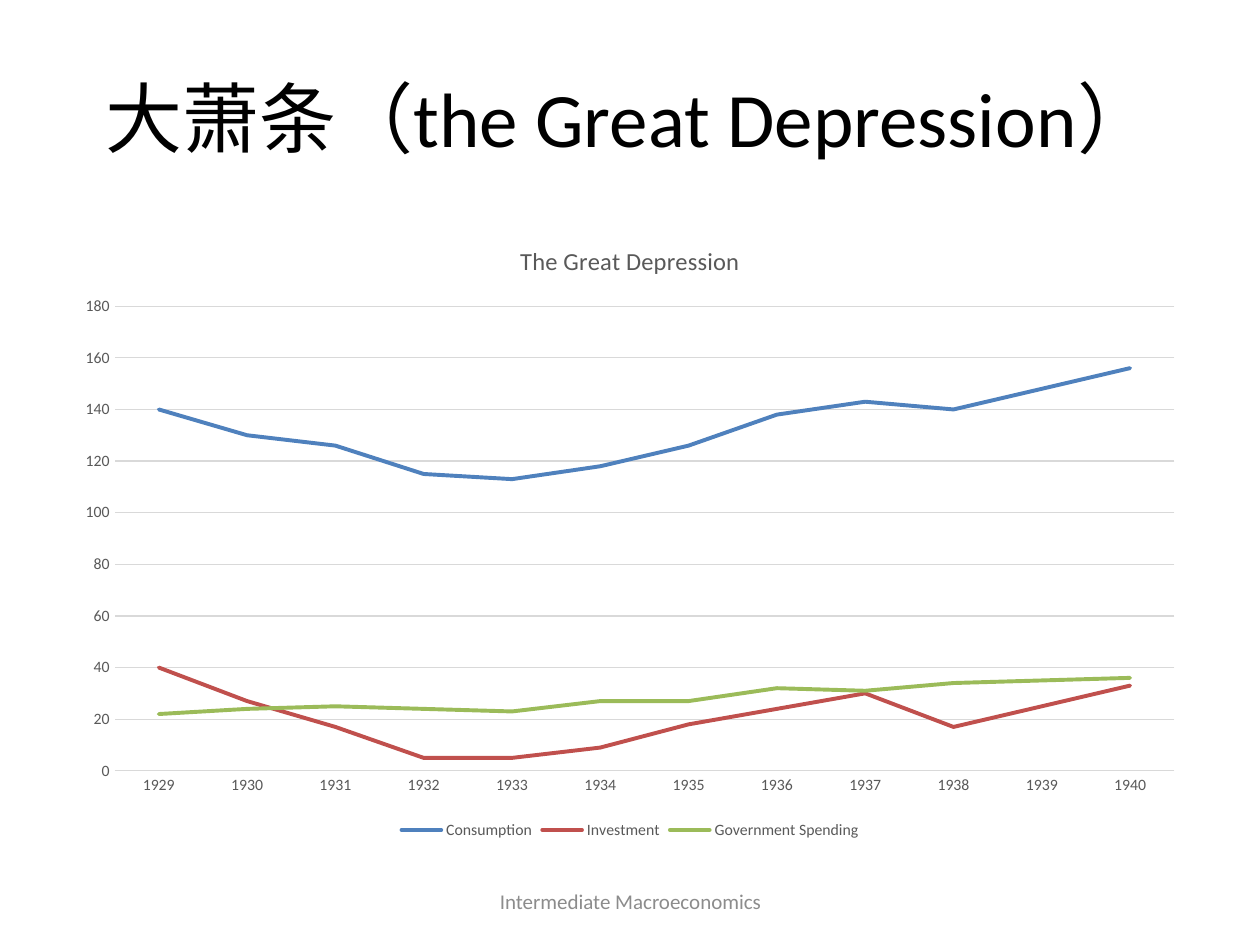
from dataclasses import dataclass

from pptx import Presentation
from pptx.chart.data import CategoryChartData
from pptx.dml.color import RGBColor
from pptx.enum.chart import XL_CHART_TYPE, XL_LEGEND_POSITION, XL_MARKER_STYLE, XL_TICK_MARK
from pptx.enum.text import MSO_ANCHOR, PP_ALIGN
from pptx.util import Emu, Pt

LINE_CHART = XL_CHART_TYPE.LINE
LEGEND_BOTTOM = XL_LEGEND_POSITION.BOTTOM
NO_MARKER = XL_MARKER_STYLE.NONE
NO_TICK = XL_TICK_MARK.NONE
MIDDLE = MSO_ANCHOR.MIDDLE
CENTER = PP_ALIGN.CENTER

EMU_PER_PX = 9144  # 100 px to the inch


@dataclass(frozen=True)
class Theme:
    font: str = "Calibri"
    ink: str = "000000"
    footer: str = "8C8C8C"
    label: str = "595959"
    grid: str = "D9D9D9"
    title_size: int = 44
    footer_size: int = 12
    chart_title_size: int = 14
    chart_size: int = 10
    label_size: int = 9
    grid_width: float = 0.75
    series_width: float = 2.25


@dataclass(frozen=True)
class Box:
    left: int
    top: int
    width: int
    height: int

    def emu(self) -> tuple:
        return tuple(px(v) for v in (self.left, self.top, self.width, self.height))


@dataclass(frozen=True)
class Label:
    text: str
    box: Box
    size: int
    color: str


@dataclass(frozen=True)
class Series:
    name: str
    color: str
    values: tuple


THEME = Theme()

LABELS = (
    Label("大萧条（the Great Depression）", Box(50, 30, 900, 125), THEME.title_size, THEME.ink),
    Label("Intermediate Macroeconomics", Box(342, 695, 317, 40), THEME.footer_size, THEME.footer),
)

CHART_BOX = Box(50, 175, 900, 495)
YEARS = [str(year) for year in range(1929, 1941)]
SERIES = (
    Series("Consumption", "4F81BD",
           (140, 130, 126, 115, 113, 118, 126, 138, 143, 140, 148, 156)),
    Series("Investment", "C0504D",
           (40, 27, 17, 5, 5, 9, 18, 24, 30, 17, 25, 33)),
    Series("Government Spending", "9BBB59",
           (22, 24, 25, 24, 23, 27, 27, 32, 31, 34, 35, 36)),
)


def px(value: int) -> Emu:
    return Emu(value * EMU_PER_PX)


def style_font(font, size: int, color: str) -> None:
    font.name = THEME.font
    font.size = Pt(size)
    font.bold = False
    font.color.rgb = RGBColor.from_string(color)


def style_line(line, width: float, color: str) -> None:
    line.width = Pt(width)
    line.color.rgb = RGBColor.from_string(color)


def add_label(s, label: Label) -> None:
    tf = s.shapes.add_textbox(*label.box.emu()).text_frame
    tf.word_wrap = True
    tf.vertical_anchor = MIDDLE
    tf.text = label.text
    p = tf.paragraphs[0]
    p.alignment = CENTER
    style_font(p.runs[0].font, label.size, label.color)


def style_axis(axis) -> None:
    axis.major_tick_mark = NO_TICK
    axis.minor_tick_mark = NO_TICK
    style_font(axis.tick_labels.font, THEME.label_size, THEME.label)


def add_line_chart(s, box: Box, title: str, series: tuple) -> None:
    data = CategoryChartData(number_format="General")
    data.categories = YEARS
    for item in series:
        data.add_series(item.name, item.values)
    chart = s.shapes.add_chart(LINE_CHART, *box.emu(), data).chart
    style_font(chart.font, THEME.chart_size, THEME.ink)

    # Chart title
    tf = chart.chart_title.text_frame
    tf.text = title
    style_font(tf.paragraphs[0].runs[0].font, THEME.chart_title_size, THEME.label)
    chart.chart_title.include_in_layout = False

    # Legend
    chart.has_legend = True
    chart.legend.position = LEGEND_BOTTOM
    chart.legend.include_in_layout = False
    style_font(chart.legend.font, THEME.label_size, THEME.label)

    # Axes and gridlines
    years, amounts = chart.category_axis, chart.value_axis
    style_axis(years)
    style_axis(amounts)
    style_line(years.format.line, THEME.grid_width, THEME.grid)
    amounts.format.line.fill.background()
    amounts.minimum_scale, amounts.maximum_scale, amounts.major_unit = 0, 180, 20
    amounts.has_major_gridlines = True
    style_line(amounts.major_gridlines.format.line, THEME.grid_width, THEME.grid)

    # Series lines
    plot = chart.plots[0]
    plot.vary_by_categories = False
    for line, item in zip(plot.series, series):
        line.smooth = False
        line.marker.style = NO_MARKER
        style_line(line.format.line, THEME.series_width, item.color)
        line.format.line._get_or_add_ln().set("cap", "rnd")


def main() -> None:
    prs = Presentation()
    prs.slide_width, prs.slide_height = px(1000), px(750)
    s = prs.slides.add_slide(prs.slide_layouts[6])

    # Heading and footer
    for label in LABELS:
        add_label(s, label)

    # Spending by year
    add_line_chart(s, CHART_BOX, "The Great Depression", SERIES)

    prs.save("out.pptx")


if __name__ == "__main__":
    main()
